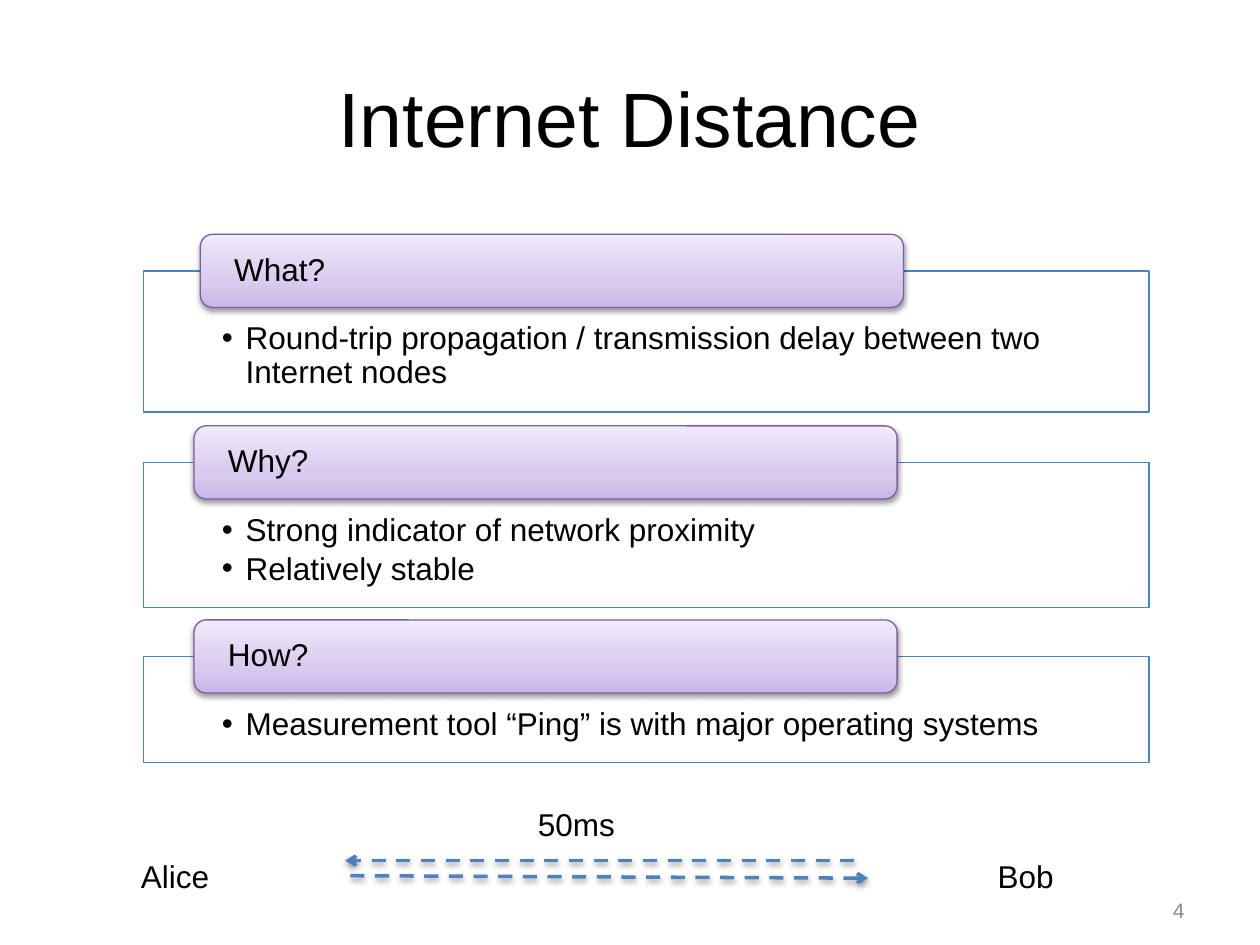
from lxml.etree import SubElement
from pptx import Presentation
from pptx.dml.color import RGBColor
from pptx.enum.dml import MSO_LINE
from pptx.enum.shapes import MSO_CONNECTOR, MSO_SHAPE
from pptx.enum.text import MSO_ANCHOR, PP_ALIGN
from pptx.oxml import parse_xml
from pptx.oxml.ns import nsdecls, qn
from pptx.util import Inches, Pt

COLORS = {
    "text": "000000", "number": "8C8C8C", "white": "FFFFFF", "blue": "4F81BD",
    "purple": "7D60A0", "dark": "C9B5E8", "middle": "D8CBEE", "light": "F0EAF9",
}
FONT = "Arial"
# heading, heading left, box top, box height, bullets
SECTIONS = [
    ("What?", 1.59, 2.15, 1.12,
     ["Round-trip propagation / transmission delay between two Internet nodes"]),
    ("Why?", 1.54, 3.67, 1.15,
     ["Strong indicator of network proximity", "Relatively stable"]),
    ("How?", 1.54, 5.21, 0.84,
     ["Measurement tool “Ping” is with major operating systems"]),
]


def rgb(name):
    return RGBColor.from_string(COLORS[name])


def format_text(tf, size=18, color="text", align=PP_ALIGN.LEFT):
    for p in tf.paragraphs:
        p.alignment = align
        for r in p.runs:
            r.font.size = Pt(size)
            r.font.name = FONT
            r.font.color.rgb = rgb(color)


def set_insets(tf, left, top, right, bottom):
    tf.margin_left, tf.margin_top = Inches(left), Inches(top)
    tf.margin_right, tf.margin_bottom = Inches(right), Inches(bottom)


def add_shadow(sp):
    spPr = sp._element.spPr
    for old in spPr.findall(qn("a:effectLst")):
        spPr.remove(old)
    spPr.append(parse_xml(
        f'<a:effectLst {nsdecls("a")}><a:outerShdw blurRad="{Pt(3.1)}" '
        f'dist="{Pt(1.6)}" dir="5400000" rotWithShape="0"><a:srgbClr '
        f'val="{COLORS["text"]}"><a:alpha val="38000"/></a:srgbClr>'
        '</a:outerShdw></a:effectLst>'))


def fill_gradient(sp):
    sp.fill.background()
    spPr = sp._element.spPr
    stops = "".join(
        f'<a:gs pos="{pos}"><a:srgbClr val="{COLORS[name]}"/></a:gs>'
        for pos, name in ((0, "dark"), (35000, "middle"), (100000, "light")))
    spPr.replace(spPr.find(qn("a:noFill")), parse_xml(
        f'<a:gradFill {nsdecls("a")} rotWithShape="1"><a:gsLst>{stops}</a:gsLst>'
        '<a:lin ang="16200000" scaled="0"/></a:gradFill>'))


def add_panel(s, kind, left, top, width, height, line):
    sp = s.shapes.add_shape(kind, Inches(left), Inches(top),
                            Inches(width), Inches(height))
    sp.shadow.inherit = False
    sp.line.color.rgb = rgb(line)
    sp.line.width = Pt(0.75)
    sp.text_frame.word_wrap = True
    return sp


def add_bullet(p):
    pPr = p._p.get_or_add_pPr()
    pPr.set("marL", str(Inches(0.19)))
    pPr.set("indent", str(Inches(-0.19)))
    SubElement(pPr, qn("a:buFont"), typeface=FONT)
    SubElement(pPr, qn("a:buChar"), char="•")


def add_section(s, heading, heading_left, bullets, left, top, width, height):
    # Outlined box with bullets
    box = add_panel(s, MSO_SHAPE.RECTANGLE, left, top, width, height, "blue")
    box.fill.solid()
    box.fill.fore_color.rgb = rgb("white")
    tf = box.text_frame
    tf.vertical_anchor = MSO_ANCHOR.TOP
    set_insets(tf, 0.62, 0.41, 0.62, 0.14)
    tf.text = "\n".join(bullets)
    format_text(tf)
    for p in tf.paragraphs:
        p.line_spacing = 0.9
        p.space_after = Pt(2.7)
        add_bullet(p)

    # Heading across the top edge
    tab = add_panel(s, MSO_SHAPE.ROUNDED_RECTANGLE, heading_left, top - 0.29,
                    5.58, 0.58, "purple")
    fill_gradient(tab)
    add_shadow(tab)
    tf = tab.text_frame
    tf.vertical_anchor = MSO_ANCHOR.MIDDLE
    set_insets(tf, 0.24, 0, 0.24, 0)
    tf.text = heading
    format_text(tf)
    tf.paragraphs[0].line_spacing = 0.9


def add_label(s, text, left, top, width, **style):
    tb = s.shapes.add_textbox(Inches(left), Inches(top), Inches(width), Inches(0.4))
    tf = tb.text_frame
    tf.word_wrap = True
    tf.text = text
    format_text(tf, **style)
    return tf


def add_arrow(s, x1, y1, x2, y2):
    cx = s.shapes.add_connector(MSO_CONNECTOR.STRAIGHT, Inches(x1), Inches(y1),
                                Inches(x2), Inches(y2))
    cx.line.color.rgb = rgb("blue")
    cx.line.width = Pt(2)
    cx.line.dash_style = MSO_LINE.DASH
    SubElement(cx.line._get_or_add_ln(), qn("a:tailEnd"), type="arrow")
    add_shadow(cx)


def add_round_trip(s, left, top):
    add_arrow(s, left + 1.76, top + 0.61, left + 5.87, top + 0.63)
    add_arrow(s, left + 5.76, top + 0.49, left + 1.72, top + 0.49)
    add_label(s, "50ms", left + 3.15, top, 1.09)
    add_label(s, "Alice", left, top + 0.41, 0.75)
    add_label(s, "Bob", left + 6.8, top + 0.41, 0.75)


def add_title(s, text, left, top, width, height):
    title = s.shapes.title
    title.left, title.top = Inches(left), Inches(top)
    title.width, title.height = Inches(width), Inches(height)
    title.text_frame.text = text
    title.text_frame.vertical_anchor = MSO_ANCHOR.MIDDLE
    format_text(title.text_frame, 44, align=PP_ALIGN.CENTER)


def main():
    prs = Presentation()
    prs.slide_width, prs.slide_height = Inches(10), Inches(7.5)
    s = prs.slides.add_slide(prs.slide_layouts[5])
    add_title(s, "Internet Distance", 0.5, 0.3, 9, 1.25)
    for heading, heading_left, top, height, bullets in SECTIONS:
        add_section(s, heading, heading_left, bullets, 1.14, top, 7.98, height)
    add_round_trip(s, 1.02, 6.34)
    # Slide number
    tf = add_label(s, "4", 7.17, 7.02, 2.33, size=12, color="number",
                   align=PP_ALIGN.RIGHT)
    tf.vertical_anchor = MSO_ANCHOR.MIDDLE
    prs.save("out.pptx")


if __name__ == "__main__":
    main()
